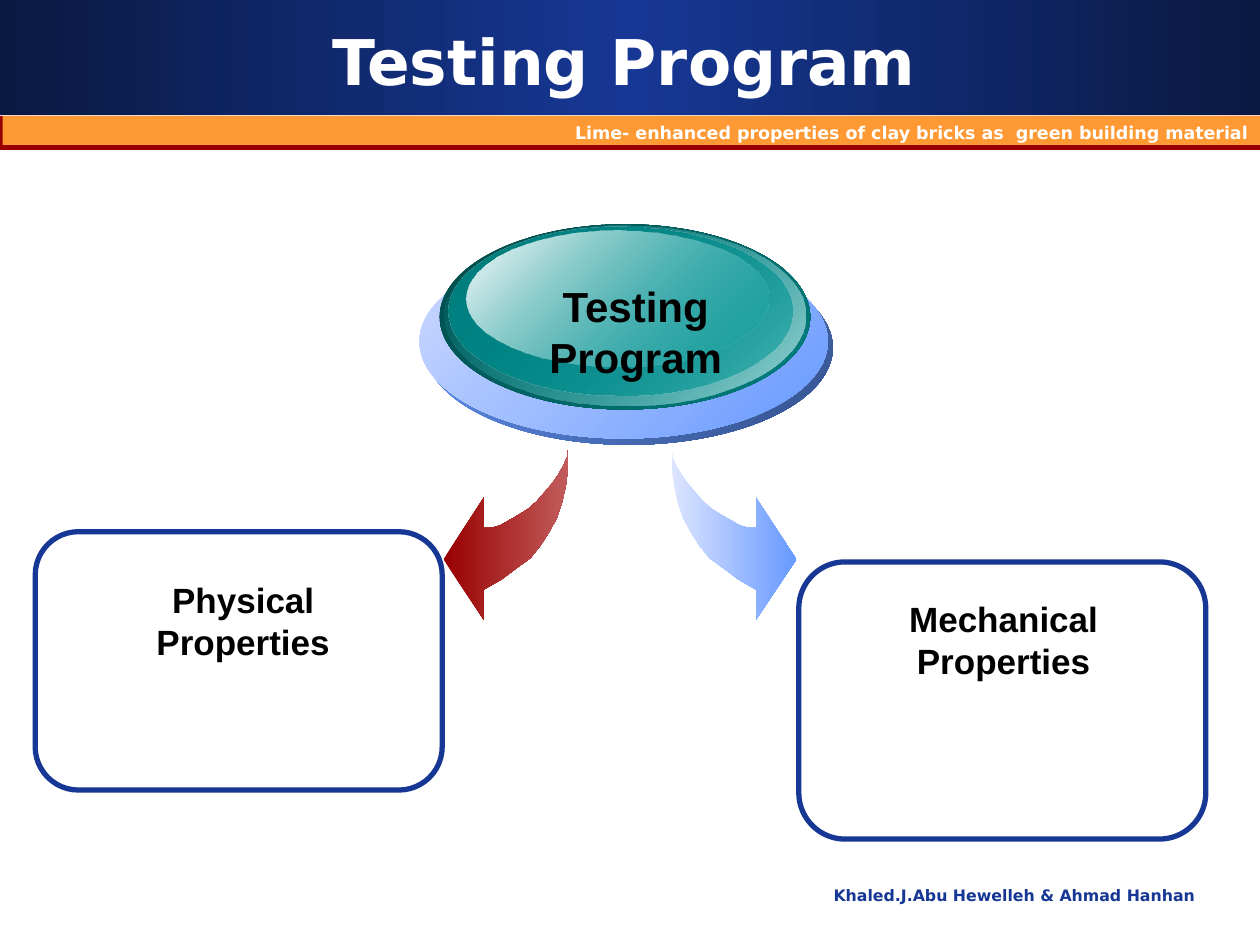
from lxml import etree
from pptx import Presentation
from pptx.dml.color import RGBColor
from pptx.enum.shapes import MSO_SHAPE
from pptx.enum.text import MSO_ANCHOR, PP_ALIGN
from pptx.oxml.ns import qn
from pptx.util import Inches, Pt

RECTANGLE, ELLIPSE, ROUNDED = MSO_SHAPE.RECTANGLE, MSO_SHAPE.OVAL, MSO_SHAPE.ROUNDED_RECTANGLE
CENTER, RIGHT = PP_ALIGN.CENTER, PP_ALIGN.RIGHT
TOP, MIDDLE = MSO_ANCHOR.TOP, MSO_ANCHOR.MIDDLE
HEADING_FONT, BODY_FONT = "DejaVu Sans", "Arial"

COLORS = {
    "navy": "163794", "dark_navy": "0A1942", "red": "990000", "pale_red": "C25C5C",
    "orange": "FF9933", "white": "FFFFFF", "black": "000000",
    "blue": "6699FF", "pale_blue": "CEDAFF", "ice": "DDE5FF", "shade_blue": "34508A",
    "deep_teal": "004A4A", "dark_teal": "008080", "teal": "009999", "pale_teal": "A0D6D6",
}

# Each entry: left, top, width, height, then (colour, opacity) for both gradient ends.
DISC_LAYERS = [
    (0.04, 0.21, 3.24, 1.54, ("blue", 100), ("shade_blue", 100)),
    (0, 0.16, 3.24, 1.54, ("pale_blue", 100), ("blue", 100)),
    (0.16, 0, 2.94, 1.47, ("deep_teal", 100), ("dark_teal", 100)),
    (0.2, 0.01, 2.86, 1.43, ("teal", 0), ("pale_teal", 100)),
    (0.23, 0.02, 2.73, 1.34, ("dark_teal", 100), ("teal", 48)),
    (0.37, 0.05, 2.4, 1.08, ("white", 100), ("teal", 38)),
]

ARROW_WIDTH = 0.99
ARROW_POINTS = [
    (0, 0), (0, 0.15), (0.02, 0.3), (0.05, 0.43), (0.09, 0.55), (0.15, 0.66),
    (0.22, 0.77), (0.3, 0.87), (0.41, 0.95), (0.53, 1.04), (0.67, 1.12),
    (0.67, 1.36), (0.99, 0.88), (0.67, 0.39), (0.67, 0.63), (0.61, 0.63),
    (0.54, 0.61), (0.47, 0.57), (0.4, 0.53), (0.32, 0.48), (0.25, 0.42),
    (0.19, 0.35), (0.13, 0.28), (0.08, 0.21), (0.04, 0.14), (0.01, 0.07),
]


def color(name):
    """Return the named colour."""
    return RGBColor.from_string(COLORS[name])


def fill_gradient(shape, ends, angle=0):
    """Fill a shape with evenly spaced (colour, opacity) stops."""
    shape.fill.gradient()
    gradient = shape._element.spPr.find(qn("a:gradFill"))
    stops = gradient.find(qn("a:gsLst"))
    for stop in list(stops):
        stops.remove(stop)
    for index, (name, opacity) in enumerate(ends):
        position = 100000 * index // (len(ends) - 1)
        stop = etree.SubElement(stops, qn("a:gs"), pos=str(position))
        value = etree.SubElement(stop, qn("a:srgbClr"), val=COLORS[name])
        if opacity < 100:
            etree.SubElement(value, qn("a:alpha"), val=str(opacity * 1000))
    direction = gradient.find(qn("a:lin"))
    direction.set("ang", str(angle * 60000))
    direction.set("scaled", "0")


def add_plain_shape(slide, kind, box, fill=None):
    """Add a preset shape with no outline or shadow."""
    shape = slide.shapes.add_shape(kind, *map(Inches, box))
    shape.shadow.inherit = False
    shape.line.fill.background()
    if fill:
        shape.fill.solid()
        shape.fill.fore_color.rgb = color(fill)
    else:
        shape.fill.background()
    return shape


def set_text(shape, text, size, font, name, alignment, anchor=TOP):
    """Write one bold paragraph in a shape."""
    frame = shape.text_frame
    frame.text = text
    frame.word_wrap = True
    frame.vertical_anchor = anchor
    paragraph = frame.paragraphs[0]
    paragraph.alignment = alignment
    style = paragraph.runs[0].font
    style.size, style.name, style.bold = Pt(size), font, True
    style.color.rgb = color(name)


def add_label(slide, box, text, size, font=BODY_FONT, name="black", alignment=CENTER):
    """Add a text box."""
    label = slide.shapes.add_textbox(*map(Inches, box))
    set_text(label, text, size, font, name, alignment)


def add_header(slide, box):
    """Build the title band and the strip below it."""
    left, top, width, height = box
    band = add_plain_shape(slide, RECTANGLE, (left, top, width, 0.91))
    fill_gradient(band, [("dark_navy", 100), ("navy", 100), ("dark_navy", 100)])
    add_plain_shape(slide, RECTANGLE, (left, top + 0.92, width, height - 0.92), "red")
    strip = add_plain_shape(slide, RECTANGLE, (left + 0.02, top + 0.92, width - 0.02, 0.23), "orange")
    set_text(strip, "Lime- enhanced properties of clay bricks as  green building material",
             10, HEADING_FONT, "white", RIGHT)
    title = slide.shapes.title
    title.left, title.top = Inches(left + 0.33), Inches(top + 0.17)
    title.width, title.height = Inches(9.25), Inches(0.62)
    set_text(title, "Testing Program", 36, HEADING_FONT, "white", CENTER, MIDDLE)
    slide.shapes._spTree.append(title._element)


def add_disc(slide, box):
    """Build the glossy disc and its label."""
    left, top, width, height = box
    for x, y, layer_width, layer_height, start, end in DISC_LAYERS:
        layer = add_plain_shape(slide, ELLIPSE, (left + x, top + y, layer_width, layer_height))
        fill_gradient(layer, [start, end], 45)
    add_label(slide, (left + 0.41, top + 0.4, width - 0.67, height - 0.84), "Testing Program", 24)


def add_curved_arrow(slide, left, top, ends, mirrored=False):
    """Draw a curved arrow that points right, or left when mirrored."""
    points = [
        (Inches(left + (ARROW_WIDTH - x if mirrored else x)), Inches(top + y))
        for x, y in ARROW_POINTS
    ]
    builder = slide.shapes.build_freeform(*points[0])
    builder.add_line_segments(points[1:], close=True)
    arrow = builder.convert_to_shape()
    arrow.shadow.inherit = False
    arrow.line.fill.background()
    fill_gradient(arrow, [(name, 100) for name in ends])


def add_property_box(slide, box, label_box, text):
    """Build an outlined box with a label placed relative to it."""
    frame = add_plain_shape(slide, ROUNDED, box)
    frame.adjustments[0] = 0.167
    frame.line.color.rgb = color("navy")
    frame.line.width = Pt(3)
    x, y, width, height = label_box
    add_label(slide, (box[0] + x, box[1] + y, width, height), text, 20)


def main():
    """Build and save the slide."""
    presentation = Presentation()
    presentation.slide_width, presentation.slide_height = Inches(10), Inches(7.5)
    slide = presentation.slides.add_slide(presentation.slide_layouts[5])
    add_header(slide, (0, 0, 10, 1.19))
    add_label(slide, (5.31, 6.98, 4.27, 0.44), "Khaled.J.Abu Hewelleh & Ahmad Hanhan",
              9, HEADING_FONT, "navy", RIGHT)
    add_property_box(slide, (6.34, 4.46, 3.23, 2.2), (0.55, 0.23, 2.15, 1.78), "Mechanical Properties")
    add_property_box(slide, (0.28, 4.22, 3.23, 2.05), (0.31, 0.32, 2.68, 1.35), "Physical Properties")
    add_curved_arrow(slide, 3.52, 3.56, ("red", "pale_red"), mirrored=True)
    add_curved_arrow(slide, 5.33, 3.56, ("ice", "blue"))
    add_disc(slide, (3.33, 1.78, 3.28, 1.75))
    presentation.save("out.pptx")


if __name__ == "__main__":
    main()
